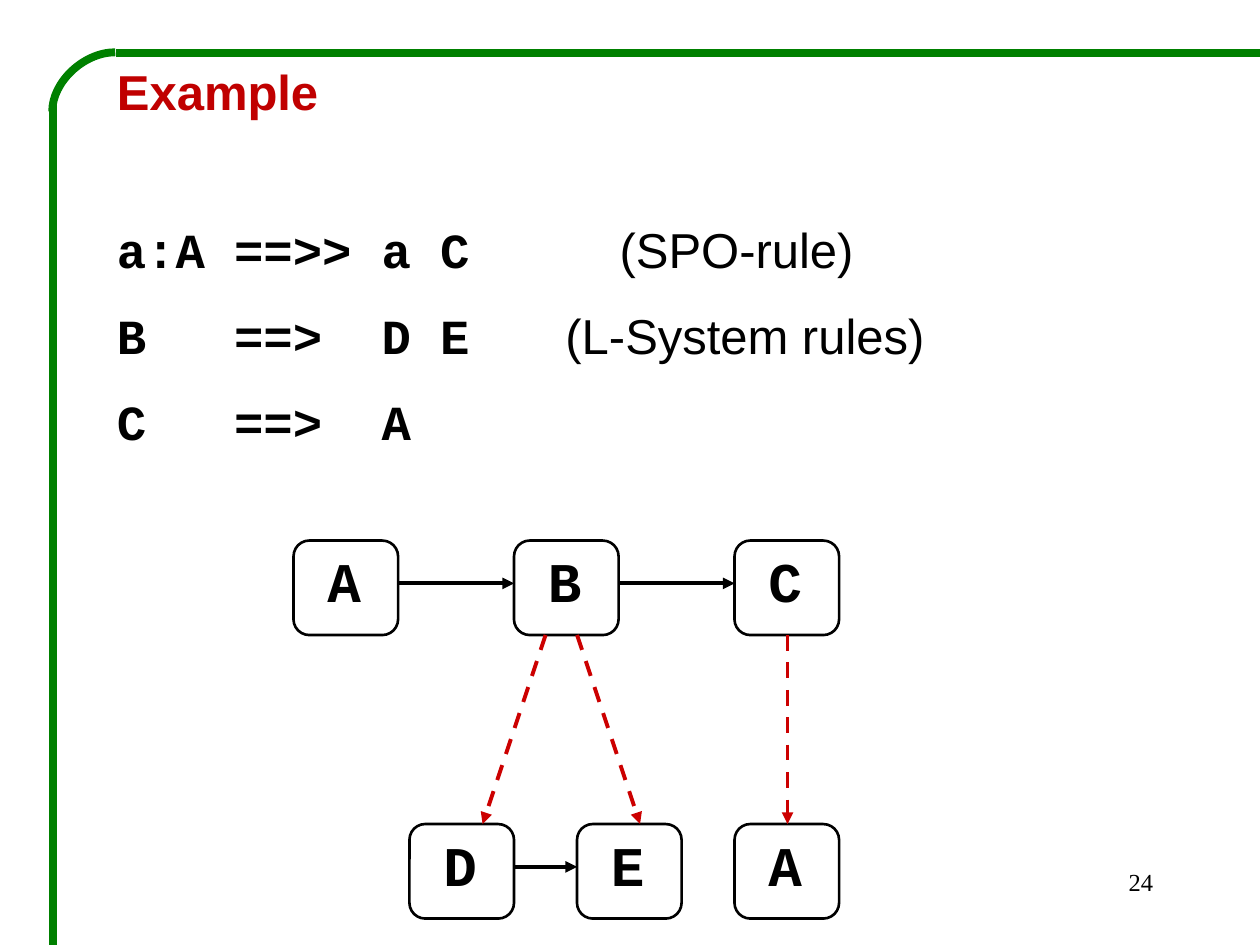
from dataclasses import dataclass

import lxml.etree
import pptx
import pptx.dml.color
import pptx.enum.dml
import pptx.enum.shapes
import pptx.enum.text
import pptx.oxml.ns
import pptx.util
from pptx.util import Inches

COLORS = {"ink": "000000", "rule": "CC0000", "title": "C00000", "frame": "008000"}
FORMATS = {
    "node": {"name": "Courier New", "size": pptx.util.Pt(32), "bold": True},
    "title": {"name": "Arial", "size": pptx.util.Pt(28), "bold": True},
    "code": {"name": "Courier New", "size": pptx.util.Pt(28), "bold": True},
    "comment": {"name": "Arial", "size": pptx.util.Pt(28), "bold": False},
    "number": {"name": "Times New Roman", "size": pptx.util.Pt(14), "bold": False},
}
NODE_WIDTH, NODE_HEIGHT = 0.83, 0.75
TOP_ROW, BOTTOM_ROW = 4.29, 6.54
ARROW_DROP = 0.34
CODE_TABS = (0.93, 2.1)


@dataclass
class Node:
    letter: str
    left: float
    top: float


@dataclass
class Line:
    start: tuple[float, float]
    end: tuple[float, float]
    color: str
    width: float
    dashed: bool = False
    arrow: bool = False


@dataclass
class Rule:
    symbols: tuple[str, ...]
    comment: str = ""
    comment_tab: float = 0
    space_before: float = 15.5


TOP_NODES = [Node(letter, 2.33 + 1.75 * column, TOP_ROW) for column, letter in enumerate("ABC")]
BOTTOM_NODES = [Node(letter, left, BOTTOM_ROW)
                for letter, left in (("D", 3.25), ("E", 4.58), ("A", 5.83))]
RULES = [
    Rule(("a:A", "==>>", "a C"), "(SPO-rule)", 3.99, 56.5),
    Rule(("B", "==>", "D E"), "(L-System rules)", 3.56),
    Rule(("C", "==>", "A")),
]
DERIVATIONS = [(4.33, 3.83), (4.58, 5.08), (6.25, 6.25)]
FRAME = [
    Line((10, 0.42), (0.92, 0.42), "frame", 4.5),
    Line((0.42, 0.83), (0.42, 7.5), "frame", 4.5),
]


def rgb(color: str) -> pptx.dml.color.RGBColor:
    return pptx.dml.color.RGBColor.from_string(COLORS[color])


def add_element(parent, tag: str, **attributes: str):
    element = lxml.etree.SubElement(parent, pptx.oxml.ns.qn(tag))
    for name, value in attributes.items():
        element.set(name, value)
    return element


def add_run(paragraph, text: str, style: str, color: str = "ink") -> None:
    run = paragraph.add_run()
    run.text = text
    for name, value in FORMATS[style].items():
        setattr(run.font, name, value)
    run.font.color.rgb = rgb(color)


def add_text_box(slide, left: float, top: float, width: float, height: float):
    box = slide.shapes.add_textbox(Inches(left), Inches(top), Inches(width), Inches(height))
    box.text_frame.word_wrap = True
    return box.text_frame


def add_node(slide, node: Node) -> None:
    label = add_text_box(slide, node.left + 0.17, node.top, 0.58, 0.63)
    add_run(label.paragraphs[0], node.letter, "node")
    shape = slide.shapes.add_shape(
        pptx.enum.shapes.MSO_SHAPE.ROUNDED_RECTANGLE,
        Inches(node.left), Inches(node.top), Inches(NODE_WIDTH), Inches(NODE_HEIGHT))
    shape.shadow.inherit = False
    shape.fill.background()
    shape.line.color.rgb = rgb("ink")
    shape.line.width = pptx.util.Pt(1.5)


def add_line(slide, line: Line, kind=pptx.enum.shapes.MSO_CONNECTOR.STRAIGHT):
    ends = [Inches(value) for value in line.start + line.end]
    connector = slide.shapes.add_connector(kind, *ends)
    connector.line.color.rgb = rgb(line.color)
    connector.line.width = pptx.util.Pt(line.width)
    if line.dashed:
        connector.line.dash_style = pptx.enum.dml.MSO_LINE.DASH
    properties = connector._element.spPr
    if line.arrow:
        add_element(properties.find(pptx.oxml.ns.qn("a:ln")), "a:tailEnd", type="triangle")
    add_element(properties, "a:effectLst")
    return connector


def add_frame_corner(slide) -> None:
    """Join the two frame lines with a quarter curve, turned to run up and then right."""
    corner = add_line(slide, Line((0.43, 0.4), (0.9, 0.9), "frame", 4.5),
                      pptx.enum.shapes.MSO_CONNECTOR.CURVE)
    properties = corner._element.spPr
    properties.find(pptx.oxml.ns.qn("a:xfrm")).set("rot", str(270 * 60000))
    properties.find(pptx.oxml.ns.qn("a:prstGeom")).set("prst", "curvedConnector2")


def add_rule(text_frame, rule: Rule) -> None:
    paragraph = text_frame.add_paragraph()
    paragraph.space_before = pptx.util.Pt(rule.space_before)
    tabs = CODE_TABS + ((rule.comment_tab,) if rule.comment else ())
    tab_list = add_element(paragraph._p.get_or_add_pPr(), "a:tabLst")
    for position in tabs:
        add_element(tab_list, "a:tab", pos=str(Inches(position)), algn="l")
    add_run(paragraph, "\t".join(rule.symbols), "code")
    if rule.comment:
        add_run(paragraph, "\t" + rule.comment, "comment")


def add_successor_arrows(slide, chain: list[Node]) -> None:
    for source, target in zip(chain, chain[1:]):
        height = source.top + ARROW_DROP
        add_line(slide, Line((source.left + NODE_WIDTH, height), (target.left, height),
                             "ink", 2.25, arrow=True))


def main() -> None:
    presentation = pptx.Presentation()
    presentation.slide_width, presentation.slide_height = Inches(10), Inches(7.5)
    slide = presentation.slides.add_slide(presentation.slide_layouts[6])

    for node in TOP_NODES + BOTTOM_NODES:
        add_node(slide, node)
    for chain in (TOP_NODES, BOTTOM_NODES[:2]):
        add_successor_arrows(slide, chain)
    for start, end in DERIVATIONS:
        add_line(slide, Line((start, TOP_ROW + NODE_HEIGHT), (end, BOTTOM_ROW),
                             "rule", 2.25, dashed=True, arrow=True))
    for line in FRAME:
        add_line(slide, line)
    add_frame_corner(slide)

    number = add_text_box(slide, 7.17, 6.83, 2.08, 0.5).paragraphs[0]
    number.alignment = pptx.enum.text.PP_ALIGN.RIGHT
    add_run(number, "24", "number")

    body = add_text_box(slide, 0.83, 0.44, 8.67, 3.37)
    add_run(body.paragraphs[0], "Example", "title", "title")
    for rule in RULES:
        add_rule(body, rule)
    presentation.save("out.pptx")


if __name__ == "__main__":
    main()
